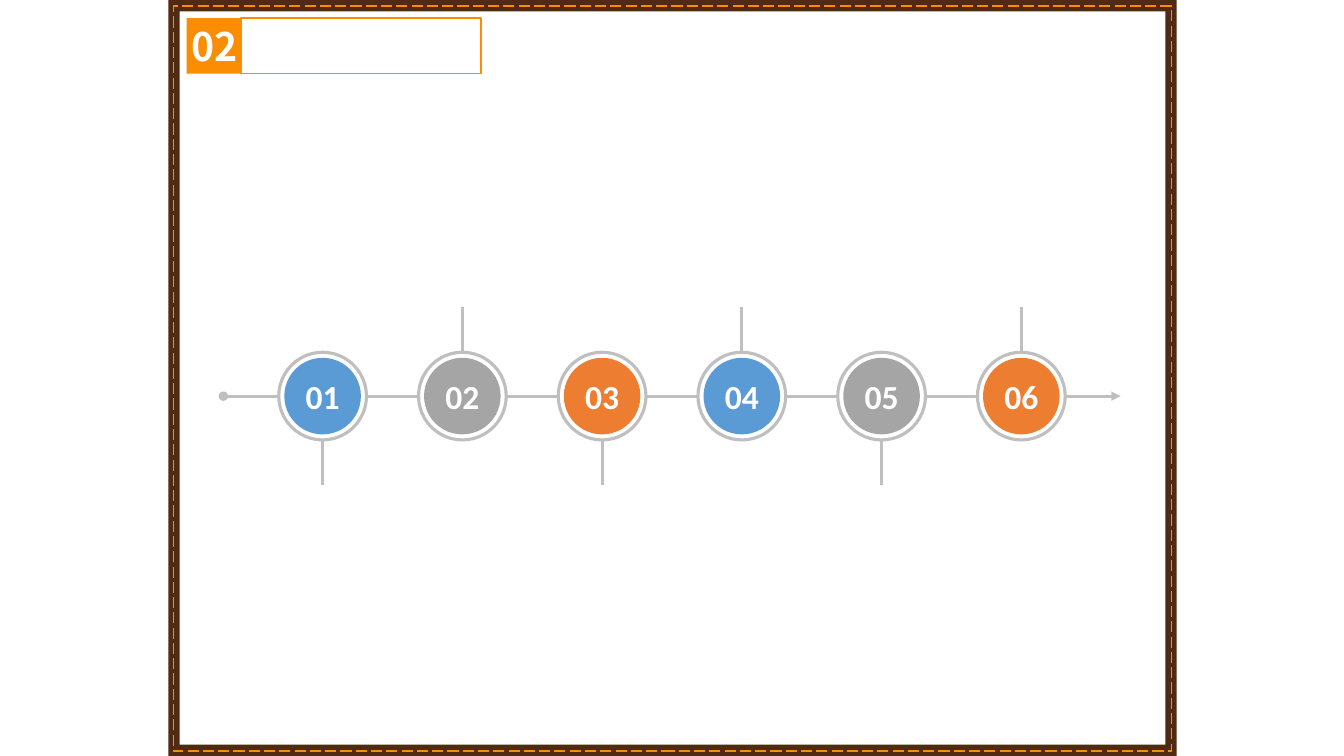
import pptx
import pptx.dml.color
import pptx.enum.dml
import pptx.enum.shapes
import pptx.enum.text
import pptx.util
from lxml import etree
from pptx.oxml.ns import qn

Inches = pptx.util.Inches
Shape = pptx.enum.shapes.MSO_SHAPE

BROWN, ORANGE, GREY, WHITE = "512A14", "FB8D02", "BFBFBF", "FFFFFF"
DISC_COLOURS = ["5B9BD5", "A5A5A5", "ED7D31"]
STEP_COUNT = 6
FIRST_X, LAST_X, AXIS_Y = 3.2, 10.13, 3.93
RING_SIZE, DISC_SIZE = 0.87, 0.76
RADIUS = RING_SIZE / 2
STEM_LENGTH, END_LENGTH = 0.45, 0.55


def colour(hex_string):
    return pptx.dml.color.RGBColor.from_string(hex_string)


class TimelineSlide:
    """Holds the slide and draws its elements in one style."""

    def __init__(self, presentation):
        self.slide = presentation.slides.add_slide(presentation.slide_layouts[5])

    def label(self, shape, text, font_name, size):
        frame = shape.text_frame
        frame.margin_left = frame.margin_right = 0
        frame.margin_top = frame.margin_bottom = 0
        frame.word_wrap = True
        frame.auto_size = pptx.enum.text.MSO_AUTO_SIZE.NONE
        frame.vertical_anchor = pptx.enum.text.MSO_ANCHOR.MIDDLE
        frame.text = text
        paragraph = frame.paragraphs[0]
        paragraph.alignment = pptx.enum.text.PP_ALIGN.CENTER
        paragraph.font.name = font_name
        paragraph.font.size = pptx.util.Pt(size)
        paragraph.font.bold = True
        paragraph.font.color.rgb = colour(WHITE)

    def title(self, text, left, top, width, height):
        shape = self.slide.shapes.title
        shape.left, shape.top = Inches(left), Inches(top)
        shape.width, shape.height = Inches(width), Inches(height)
        shape.fill.solid()
        shape.fill.fore_color.rgb = colour(ORANGE)
        self.label(shape, text, "Noto Sans CJK SC", 28)

    def filled(self, kind, left, top, width, height, fill):
        shape = self.shape(kind, left, top, width, height)
        shape.fill.solid()
        shape.fill.fore_color.rgb = colour(fill)
        shape.line.fill.background()
        return shape

    def outlined(self, kind, left, top, width, height, line, weight):
        shape = self.shape(kind, left, top, width, height)
        shape.fill.background()
        shape.line.color.rgb = colour(line)
        shape.line.width = pptx.util.Pt(weight)
        return shape

    def shape(self, kind, left, top, width, height):
        shape = self.slide.shapes.add_shape(
            kind, Inches(left), Inches(top), Inches(width), Inches(height))
        shape.shadow.inherit = False
        return shape

    def line(self, start_x, start_y, end_x, end_y, head=None, tail=None):
        connector = self.slide.shapes.add_connector(
            pptx.enum.shapes.MSO_CONNECTOR.STRAIGHT,
            Inches(start_x), Inches(start_y), Inches(end_x), Inches(end_y))
        connector.line.color.rgb = colour(GREY)
        connector.line.width = pptx.util.Pt(2.25)
        properties = connector._element.spPr
        outline = properties.find(qn("a:ln"))
        for tag, kind in (("a:headEnd", head), ("a:tailEnd", tail)):
            if kind:
                etree.SubElement(outline, qn(tag), type=kind)
        etree.SubElement(properties, qn("a:effectLst"))

    def step(self, number, x, fill):
        """Draw a numbered disc in a ring, with its stem below or above."""
        self.outlined(Shape.OVAL, x - RADIUS, AXIS_Y - RADIUS,
                      RING_SIZE, RING_SIZE, GREY, 2.25)
        disc = self.filled(Shape.OVAL, x - DISC_SIZE / 2, AXIS_Y - DISC_SIZE / 2,
                           DISC_SIZE, DISC_SIZE, fill)
        self.label(disc, f"{number:02d}", "Calibri", 24)
        direction = 1 if number % 2 else -1
        stem_y = AXIS_Y + direction * RADIUS
        self.line(x, stem_y, x, stem_y + direction * STEM_LENGTH)


def main():
    presentation = pptx.Presentation()
    presentation.slide_width, presentation.slide_height = Inches(13.33), Inches(7.5)
    page = TimelineSlide(presentation)

    border = page.filled(Shape.FRAME, 1.67, 0, 10, 7.5, BROWN)
    border.adjustments[0] = 0.015
    stitching = page.outlined(Shape.RECTANGLE, 1.72, 0.06, 9.9, 7.39, ORANGE, 1)
    stitching.line.dash_style = pptx.enum.dml.MSO_LINE.LONG_DASH
    page.title("02", 1.85, 0.18, 0.55, 0.55)
    page.outlined(Shape.RECTANGLE, 2.39, 0.18, 2.38, 0.55, ORANGE, 1)

    pitch = (LAST_X - FIRST_X) / (STEP_COUNT - 1)
    centres = [FIRST_X + index * pitch for index in range(STEP_COUNT)]
    for index, x in enumerate(centres):
        page.step(index + 1, x, DISC_COLOURS[index % len(DISC_COLOURS)])

    axis_start, axis_end = FIRST_X - RADIUS, LAST_X + RADIUS
    page.line(axis_start - END_LENGTH, AXIS_Y, axis_start, AXIS_Y, head="oval")
    for x, next_x in zip(centres, centres[1:]):
        page.line(x + RADIUS, AXIS_Y, next_x - RADIUS, AXIS_Y)
    page.line(axis_end, AXIS_Y, axis_end + END_LENGTH, AXIS_Y, tail="triangle")

    presentation.save("out.pptx")


if __name__ == "__main__":
    main()
